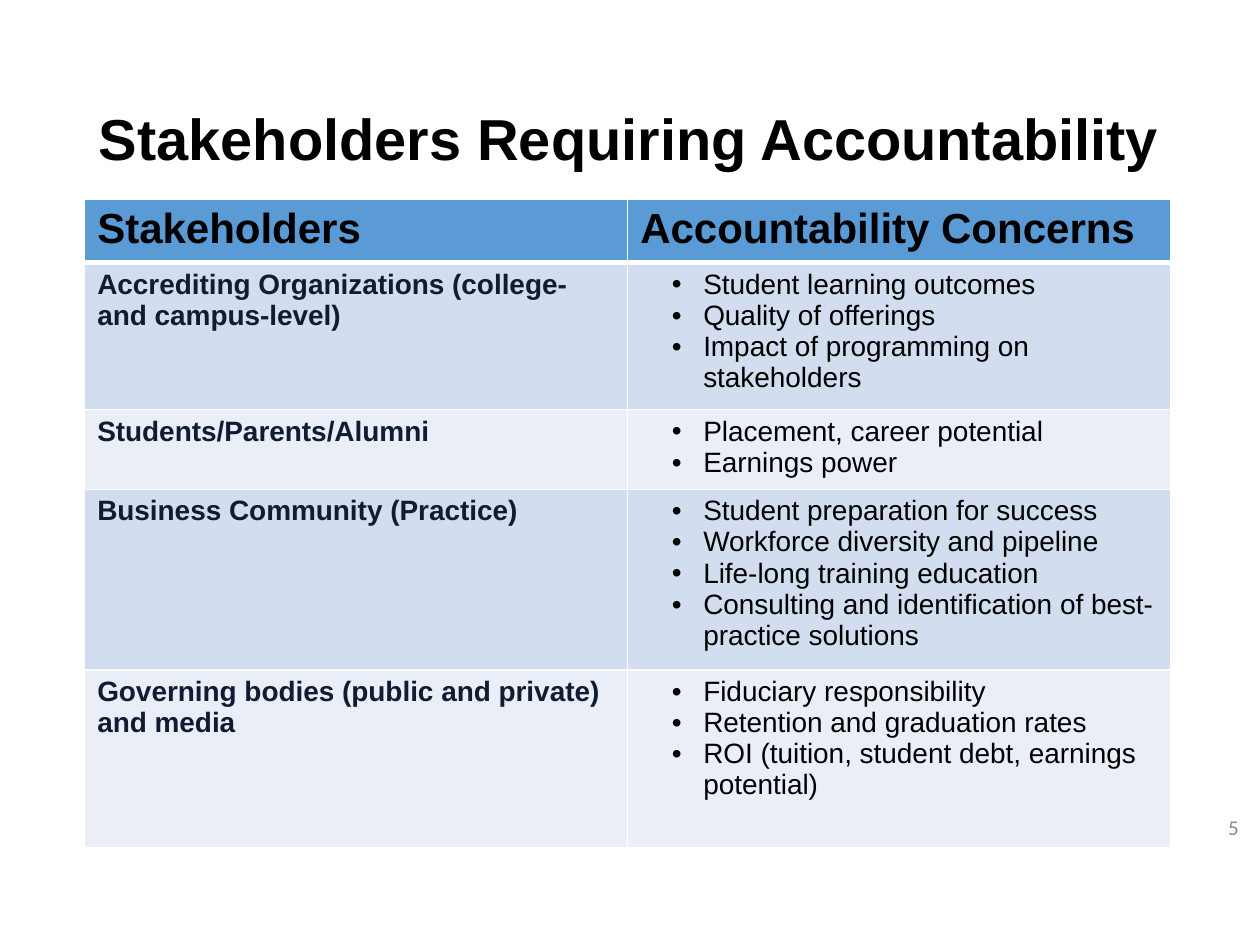
import pptx
import pptx.dml.color
import pptx.enum.text
import pptx.oxml
import pptx.oxml.ns
import pptx.util

Pt = pptx.util.Pt
ALIGN = pptx.enum.text.PP_ALIGN
ANCHOR = pptx.enum.text.MSO_ANCHOR

COLORS = {
    "text": "000000",
    "stakeholder": "101C32",
    "page": "8C8C8C",
    "header": "5B9BD5",
    "band_dark": "D2DEEF",
    "band_light": "EAEFF7",
    "border": "FFFFFF",
}

HEADINGS = ("Stakeholders", "Accountability Concerns")
CONCERNS = [
    ("Accrediting Organizations (college- and campus-level)",
     ["Student learning outcomes", "Quality of offerings",
      "Impact of programming on stakeholders"]),
    ("Students/Parents/Alumni",
     ["Placement, career potential", "Earnings power"]),
    ("Business Community (Practice)",
     ["Student preparation for success", "Workforce diversity and pipeline",
      "Life-long training education",
      "Consulting and identification of best-practice solutions"]),
    ("Governing bodies (public and private) and media",
     ["Fiduciary responsibility", "Retention and graduation rates",
      "ROI (tuition, student debt, earnings potential)"]),
]
ROW_HEIGHTS = (34, 78.5, 45.5, 101.5, 101.5)


def rgb(name):
    return pptx.dml.color.RGBColor.from_string(COLORS[name])


def style_runs(paragraph, size, color, bold=False, font="Arial"):
    for run in paragraph.runs:
        run.font.name = font
        run.font.size = Pt(size)
        run.font.bold = bold
        run.font.color.rgb = rgb(color)


def add_text(slide, box, text):
    """Add a middle-anchored text box and return its frame."""
    frame = slide.shapes.add_textbox(*map(Pt, box)).text_frame
    frame.word_wrap = True
    frame.vertical_anchor = ANCHOR.MIDDLE
    frame.text = text
    return frame


def add_title(slide, box):
    frame = add_text(slide, box, "Stakeholders Requiring Accountability")
    frame.margin_right = 0
    paragraph = frame.paragraphs[0]
    paragraph.line_spacing = 0.9
    style_runs(paragraph, 33, "text", bold=True)


def add_page_number(slide, box):
    paragraph = add_text(slide, box, "5").paragraphs[0]
    paragraph.alignment = ALIGN.RIGHT
    style_runs(paragraph, 12, "page", font="Calibri")


def add_bullet(paragraph):
    properties = paragraph._p.get_or_add_pPr()
    properties.set("marL", str(Pt(36)))
    properties.set("indent", str(-Pt(18)))
    namespace = pptx.oxml.ns.nsdecls("a")
    properties.append(pptx.oxml.parse_xml(f'<a:buFont {namespace} typeface="Arial"/>'))
    properties.append(pptx.oxml.parse_xml(f'<a:buChar {namespace} char="•"/>'))


def style_cell(cell, fill, bottom=1, top=1):
    """Set the cell's border widths in points, then its fill."""
    properties = cell._tc.get_or_add_tcPr()
    for side, width in (("L", 1), ("R", 1), ("T", top), ("B", bottom)):
        properties.append(pptx.oxml.parse_xml(
            f'<a:ln{side} {pptx.oxml.ns.nsdecls("a")} w="{Pt(width)}"><a:solidFill>'
            f'<a:srgbClr val="{COLORS["border"]}"/></a:solidFill></a:ln{side}>'))
    cell.fill.solid()
    cell.fill.fore_color.rgb = rgb(fill)


def add_concerns_table(slide, box):
    left, top, width = box
    shape = slide.shapes.add_table(len(ROW_HEIGHTS), len(HEADINGS), Pt(left),
                                   Pt(top), Pt(width), Pt(sum(ROW_HEIGHTS)))
    table = shape.table
    for column in table.columns:
        column.width = Pt(width / len(HEADINGS))
    for row, height in zip(table.rows, ROW_HEIGHTS):
        row.height = Pt(height)

    for cell, heading in zip(table.rows[0].cells, HEADINGS):
        cell.text_frame.text = heading
        style_runs(cell.text_frame.paragraphs[0], 24, "text", bold=True)
        style_cell(cell, "header", bottom=3)

    for index, (stakeholder, concerns) in enumerate(CONCERNS, start=1):
        name_cell, concern_cell = table.rows[index].cells
        name_cell.text_frame.text = stakeholder
        style_runs(name_cell.text_frame.paragraphs[0], 16, "stakeholder", bold=True)
        concern_cell.text_frame.text = "\n".join(concerns)
        for paragraph in concern_cell.text_frame.paragraphs:
            add_bullet(paragraph)
            style_runs(paragraph, 16, "text")
        for cell in (name_cell, concern_cell):
            style_cell(cell, "band_dark" if index % 2 else "band_light",
                       top=3 if index == 1 else 1)


def main():
    presentation = pptx.Presentation()
    presentation.slide_width = Pt(720)
    presentation.slide_height = Pt(540)
    slide = presentation.slides.add_slide(presentation.slide_layouts[6])
    add_title(slide, (49.5, 28.8, 621, 104.4))
    add_concerns_table(slide, (48.4, 114, 620.6))
    add_page_number(slide, (664, 458, 51, 28.8))
    presentation.save("out.pptx")


if __name__ == "__main__":
    main()
